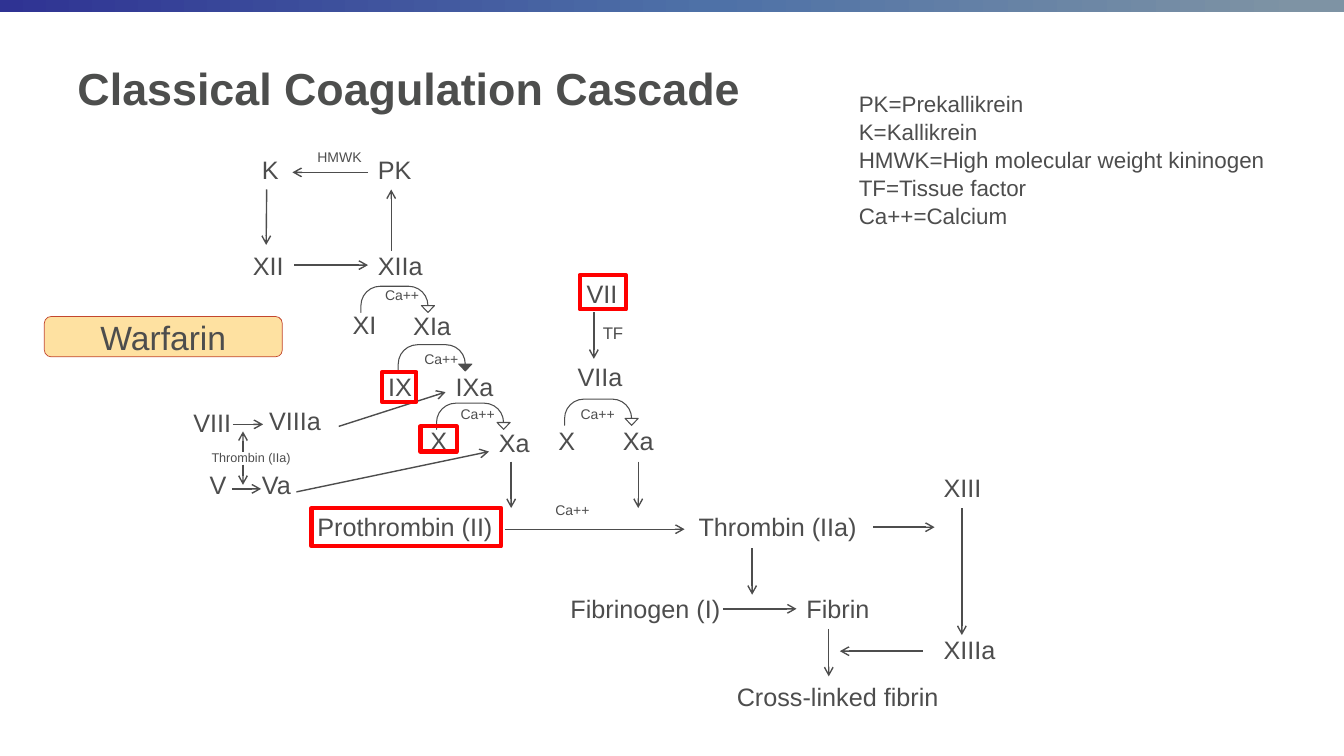
from copy import deepcopy

from lxml.etree import SubElement
from pptx import Presentation
from pptx.dml.color import RGBColor
from pptx.enum.shapes import MSO_CONNECTOR as LINE, MSO_SHAPE as SHAPE
from pptx.enum.text import MSO_ANCHOR as ANCHOR, PP_ALIGN as ALIGN
from pptx.oxml.ns import qn
from pptx.util import Inches, Pt

COLS, ROWS = 133.3, 75
CELL = Inches(0.1)
GREY, WHITE, RED = "4D4D4D", "FFFFFF", "FF0000"

prs = Presentation()
prs.slide_width, prs.slide_height = int(COLS * CELL), int(ROWS * CELL)
s = prs.slides.add_slide(prs.slide_layouts[6])


def rgb(code):
    return RGBColor.from_string(code)


def add(kind, x, y, w, h, text="", size=18, fill=None, line=None, weight=1, anchor=ANCHOR.TOP):
    box = [int(v * CELL) for v in (x, y, w, h)]
    if kind is None:
        sp = s.shapes.add_textbox(*box)
    else:
        sp = s.shapes.add_shape(kind, *box)
        sp.shadow.inherit = False
        if fill:
            sp.fill.solid()
            sp.fill.fore_color.rgb = rgb(fill)
        else:
            sp.fill.background()
        if line:
            sp.line.color.rgb = rgb(line)
            sp.line.width = Pt(weight)
        else:
            sp.line.fill.background()
    if text:
        tf = sp.text_frame
        tf.word_wrap = True
        tf.margin_right = 0
        tf.vertical_anchor = anchor
        tf.text = text
        for p in tf.paragraphs:
            p.alignment = ALIGN.LEFT
            p.font.name = "Arial"
            p.font.size = Pt(size)
            p.font.color.rgb = rgb(GREY)
    return sp


bar = add(SHAPE.RECTANGLE, 0, 0, COLS, 1.2)
bar.fill.gradient()
bar.fill.gradient_angle = 0
stops = bar._element.spPr.find(qn("a:gradFill")).find(qn("a:gsLst"))
stops.append(deepcopy(stops[0]))
for stop, (position, code) in zip(
    bar.fill.gradient_stops, [(0, "2F3393"), (0.53, "4E71A7"), (0.97, "7E93A4")]
):
    stop.position = position
    stop.color.rgb = rgb(code)

title = add(None, 6.7, 2.2, 117.5, 13, "Classical Coagulation Cascade", 32, anchor=ANCHOR.MIDDLE)
title.text_frame.paragraphs[0].font.bold = True
title.text_frame.paragraphs[0].font.color.rgb = rgb("4D4E4D")

for x, y, fill in [(35.8, 28.4, WHITE), (39.5, 34.2, GREY), (43.3, 40, WHITE), (56, 39.6, WHITE)]:
    sp = add(SHAPE.U_TURN_ARROW, x, y, 7.3, 2.6, fill=fill, line=GREY, weight=0.75)
    for i, value in enumerate([0, 0.25, 0.262, 0.738, 1]):
        sp.adjustments[i] = value

factors = {}
for text, x, y, w in [
    ("K", 25, 14.8, 2.9), ("PK", 36.5, 14.8, 7.6),
    ("XII", 24.1, 24.3, 6.6), ("XIIa", 36.5, 24.3, 8.5),
    ("XI", 34, 30.2, 5.4), ("XIa", 40, 30.3, 7.1),
    ("IX", 37.5, 36.3, 5.1), ("IXa", 44.2, 36.3, 6.4),
    ("X", 41.7, 41.7, 3.1), ("Xa", 48.5, 41.9, 5.6),
    ("VIII", 18.2, 39.9, 6.6), ("VIIIa", 25.7, 39.7, 10.1),
    ("V", 19.8, 46.1, 3.3), ("Va", 25, 46.1, 7.2),
    ("VII", 57.2, 27.1, 5.1), ("VIIa", 56.3, 35.4, 7.4),
    ("X", 54.4, 41.7, 3.1), ("Xa", 60.8, 41.7, 5.8),
    ("Prothrombin (II)", 30.5, 50.2, 21.3), ("Thrombin (IIa)", 68.3, 50.2, 18.7),
    ("Fibrinogen (I)", 55.6, 58.4, 17.1), ("Fibrin", 79, 58.4, 10.9),
    ("XIII", 92.6, 46.4, 7.3), ("XIIIa", 92.6, 62.4, 7.7),
    ("Cross-linked fibrin", 72.1, 67.1, 23.7),
]:
    factors[text] = add(None, x, y, w, 4, text)

for text, x, y, w, size in [
    ("HMWK", 30.5, 14.2, 7.2, 10),
    ("Ca++", 37.2, 27.9, 7.1, 10),
    ("Ca++", 41.1, 34.3, 8.6, 10),
    ("Ca++", 44.7, 39.7, 6.3, 10),
    ("Ca++", 56.6, 39.7, 7.8, 10),
    ("Ca++", 54.1, 49.3, 8.1, 10),
    ("TF", 58.8, 31.5, 5.2, 12),
    ("Thrombin (IIa)", 20, 44.1, 11.6, 9),
]:
    add(None, x, y, w, 2.7, text, size)

for x1, y1, x2, y2, *joint in [
    (36.5, 17.1, 29, 17.1),
    (26.4, 18.8, 26.4, 24.3, "K", 2),
    (29.2, 26.3, 36.5, 26.3, "XIIa", 1),
    (38.8, 24.9, 38.8, 18.8),
    (23.1, 42.1, 26.1, 42.1),
    (33.6, 42.3, 44.2, 38.9),
    (23, 48.5, 25.9, 48.5),
    (29.4, 48.8, 48.5, 44.8),
    (24.1, 44.8, 24.1, 42.8),
    (24.1, 46.1, 24.1, 48.1),
    (58.9, 31, 58.9, 35.6),
    (50.7, 45.8, 50.7, 50.4),
    (63.3, 45.8, 63.3, 50.4),
    (50.1, 52.5, 67.9, 52.5),
    (74.6, 54.4, 74.6, 59),
    (71.7, 60.4, 79, 60.4, "Fibrin", 1),
    (86.6, 52.3, 92.7, 52.3),
    (95.4, 50.4, 95.4, 63),
    (82.2, 62.4, 82.2, 67.1),
    (91.5, 64.6, 83.3, 64.6),
]:
    c = s.shapes.add_connector(LINE.STRAIGHT, *[int(v * CELL) for v in (x1, y1, x2, y2)])
    if joint:
        name, side = joint
        connect = c.begin_connect if side == 2 else c.end_connect
        connect(factors[name], side)
    c.line.color.rgb = rgb(GREY)
    c.line.width = Pt(1)
    SubElement(c.line._get_or_add_ln(), qn("a:tailEnd"), type="arrow")
    SubElement(c._element.spPr, qn("a:effectLst"))

legend = add(SHAPE.RECTANGLE, 84.2, 8.6, 43.9, 14.5, "\n".join([
    "PK=Prekallikrein",
    "K=Kallikrein",
    "HMWK=High molecular weight kininogen",
    "TF=Tissue factor",
    "Ca++=Calcium",
]), 16, line=WHITE, weight=0.5, anchor=ANCHOR.MIDDLE)
for p in legend.text_frame.paragraphs:
    p.space_after = Pt(0.9)

drug = add(SHAPE.ROUNDED_RECTANGLE, 4.4, 31.4, 23.6, 4, "Warfarin", 24,
           fill="FEE1A1", line="C3472E", weight=0.5, anchor=ANCHOR.MIDDLE)
drug.text_frame.margin_left = 0
drug.text_frame.paragraphs[0].alignment = ALIGN.CENTER

for x, y, w, h in [
    (37.9, 36.9, 3.4, 3), (41.7, 42.3, 3.6, 2.5), (30.9, 50.4, 18.8, 3.8), (57.5, 27.3, 4.6, 3.4)
]:
    add(SHAPE.RECTANGLE, x, y, w, h, line=RED, weight=3)

prs.save("out.pptx")
